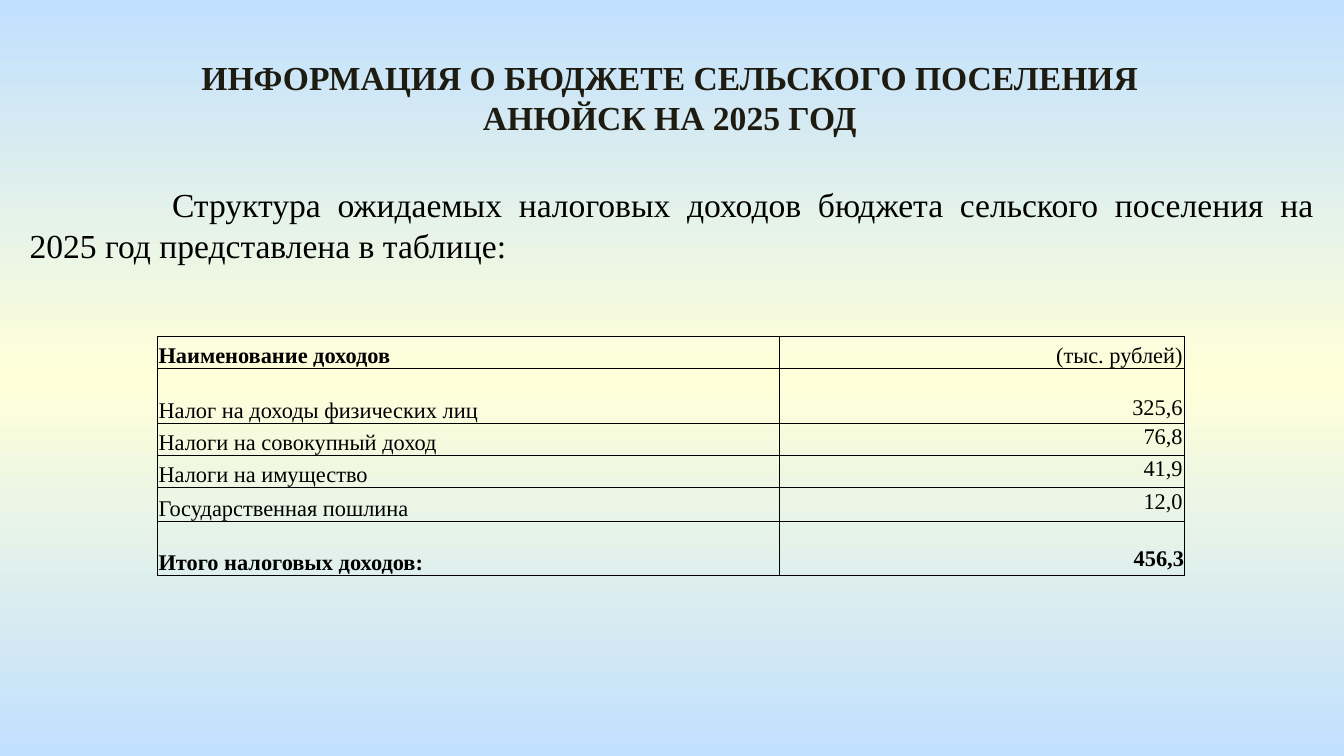
from copy import deepcopy

from pptx import Presentation
from pptx.dml.color import RGBColor
from pptx.enum.text import MSO_ANCHOR as Anchor, MSO_AUTO_SIZE as AutoSize, PP_ALIGN as Align
from pptx.oxml import parse_xml
from pptx.oxml.ns import nsdecls, qn
from pptx.util import Inches, Pt

COLORS = {"sky": "C1E0FF", "cream": "FFFFD9", "title": "1E1C11", "text": "000000"}


def write(frame, text, size, align, color="text", bold=False):
    paragraph = frame.paragraphs[0]
    paragraph.alignment = align
    paragraph.space_before = Pt(0)
    run = paragraph.add_run()
    run.text = text
    font_format = {"name": "Times New Roman", "size": Pt(size), "bold": bold}
    for attribute, value in font_format.items():
        setattr(run.font, attribute, value)
    run.font.color.rgb = RGBColor.from_string(COLORS[color])
    return paragraph


def place(shape, left, top, width, height):
    box = {"left": left, "top": top, "width": width, "height": height}
    for attribute, value in box.items():
        setattr(shape, attribute, Inches(value))
    frame_format = {"word_wrap": True, "auto_size": AutoSize.SHAPE_TO_FIT_TEXT,
                    "vertical_anchor": Anchor.TOP}
    for attribute, value in frame_format.items():
        setattr(shape.text_frame, attribute, value)


# Widescreen slide, 16:9
prs = Presentation()
prs.slide_width = Inches(10)
prs.slide_height = Inches(10 * 9 / 16)
slide = prs.slides.add_slide(prs.slide_layouts[1])

# Background: sky to cream and back, top to bottom
background = slide.background.fill
background.gradient()
background.gradient_angle = 270
stop_list = slide.element.find(".//" + qn("a:gsLst"))
stop_list.append(deepcopy(stop_list[0]))
for stop, position, color in zip(background.gradient_stops, (0, 0.5, 1), ("sky", "cream", "sky")):
    stop.position = position
    stop.color.rgb = RGBColor.from_string(COLORS[color])

# Title
title = slide.shapes.title
place(title, 1.12, 0.37, 7.73, 0.71)
write(title.text_frame, "ИНФОРМАЦИЯ О БЮДЖЕТЕ СЕЛЬСКОГО ПОСЕЛЕНИЯ АНЮЙСК НА 2025 ГОД",
      18, Align.CENTER, "title", bold=True)

# Introduction with a first-line indent and no bullet
intro = slide.placeholders[1]
place(intro, 0.12, 1.32, 9.76, 0.71)
intro_paragraph = write(
    intro.text_frame,
    "Структура ожидаемых налоговых доходов бюджета сельского поселения на 2025 год "
    "представлена в таблице:", 18, Align.JUSTIFY)
intro_properties = intro_paragraph._p.get_or_add_pPr()
intro_properties.set("marL", "0")
intro_properties.set("indent", str(Inches(1.06)))
intro_properties.append(parse_xml(f"<a:buNone {nsdecls('a')}/>"))

# Tax revenue table: name, value, row height, space above the value
revenues = [
    ("Наименование доходов", "(тыс. рублей)", 0.24, 0.01),
    ("Налог на доходы физических лиц", "325,6", 0.41, 0.2),
    ("Налоги на совокупный доход", "76,8", 0.24, 0.01),
    ("Налоги на имущество", "41,9", 0.24, 0.01),
    ("Государственная пошлина", "12,0", 0.25, 0.01),
    ("Итого налоговых доходов:", "456,3", 0.4, 0.19),
]
header, total = 0, len(revenues) - 1
table = slide.shapes.add_table(len(revenues), 2, Inches(1.17), Inches(2.5),
                               Inches(7.64), Inches(1.78)).table
table.first_row = table.horz_banding = False
for column, width in zip(table.columns, (4.63, 3.01)):
    column.width = Inches(width)

for row, (name, value, height, space_above) in enumerate(revenues):
    table.rows[row].height = Inches(height)
    name_cell, value_cell = table.cell(row, 0), table.cell(row, 1)
    write(name_cell.text_frame, name, 12, Align.JUSTIFY, bold=row in (header, total))
    write(value_cell.text_frame, value, 12, Align.RIGHT, bold=row == total)

    value_anchor = Anchor.BOTTOM if row == header else Anchor.TOP
    side = 0 if row == total else 0.01
    for cell, anchor, top, right in ((name_cell, Anchor.BOTTOM, 0.01, 0.01),
                                     (value_cell, value_anchor, space_above, side)):
        cell_format = {"vertical_anchor": anchor, "margin_left": Inches(0.01),
                       "margin_top": Inches(top), "margin_right": Inches(right),
                       "margin_bottom": 0}
        for attribute, setting in cell_format.items():
            setattr(cell, attribute, setting)
        # Thin borders come before the fill in the cell properties
        cell_properties = cell._tc.get_or_add_tcPr()
        for edge in ("lnL", "lnR", "lnT", "lnB"):
            cell_properties.append(parse_xml(
                f'<a:{edge} {nsdecls("a")} w="{Pt(0.5)}"><a:solidFill>'
                f'<a:srgbClr val="{COLORS["text"]}"/></a:solidFill></a:{edge}>'))
        cell.fill.background()

prs.save("out.pptx")
